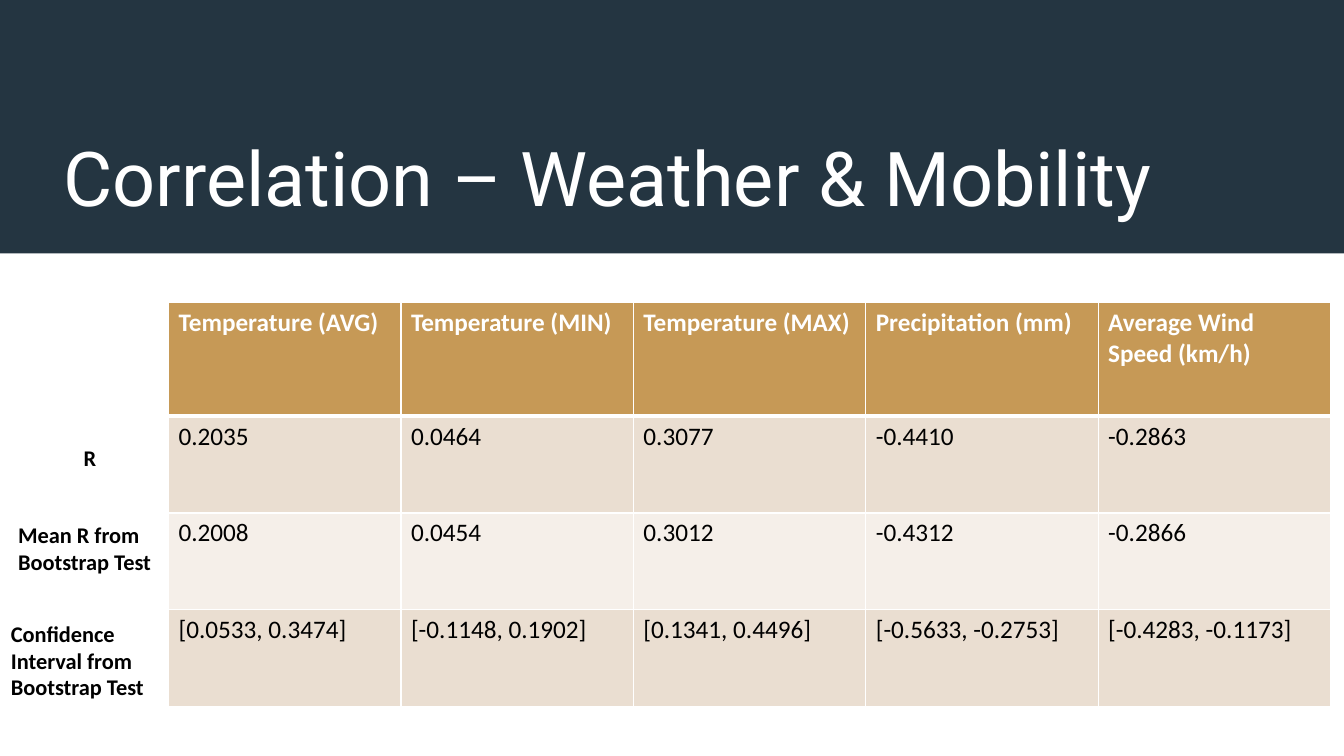
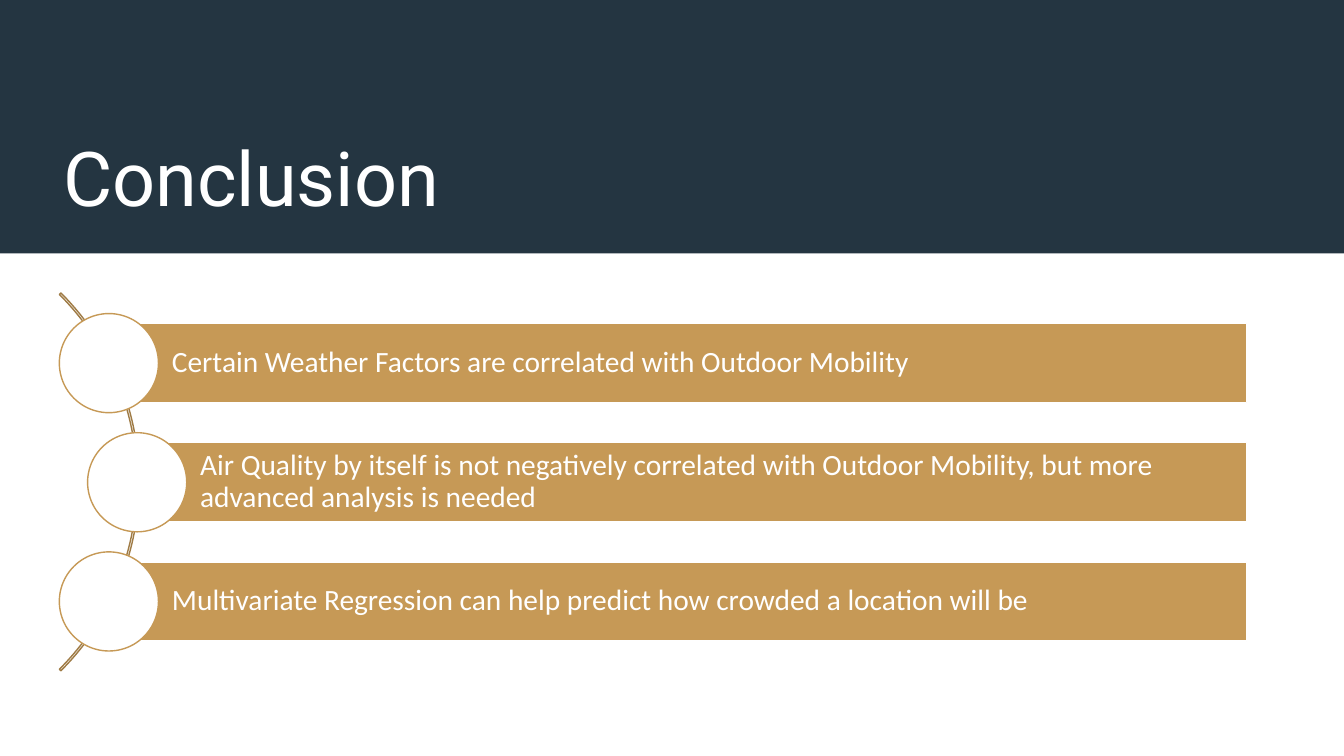
import lxml.etree
import pptx
import pptx.dml.color
import pptx.enum.shapes
import pptx.enum.text
import pptx.oxml.ns
import pptx.util

Pt = pptx.util.Pt
RGBColor = pptx.dml.color.RGBColor
Shape = pptx.enum.shapes.MSO_SHAPE
Anchor = pptx.enum.text.MSO_ANCHOR
Align = pptx.enum.text.PP_ALIGN

NAVY = RGBColor(0x24, 0x35, 0x41)
GOLD = RGBColor(0xC6, 0x99, 0x56)
BRONZE = RGBColor(0x9F, 0x7B, 0x45)
SAND = RGBColor(0xEA, 0xDE, 0xD1)
CREAM = RGBColor(0xF5, 0xEF, 0xE9)
WHITE = RGBColor(0xFF, 0xFF, 0xFF)
BLACK = RGBColor(0x00, 0x00, 0x00)

WIDTH, HEIGHT = 960, 540
INSETS = (7.2, 3.6, 7.2, 3.6)

TABLE = (
    ("Temperature (AVG)", "Temperature (MIN)", "Temperature (MAX)",
     "Precipitation (mm)", "Average Wind Speed (km/h)"),
    ("0.2035", "0.0464", "0.3077", "-0.4410", "-0.2863"),
    ("0.2008", "0.0454", "0.3012", "-0.4312", "-0.2866"),
    ("[0.0533, 0.3474]", "[-0.1148, 0.1902]", "[0.1341, 0.4496]",
     "[-0.5633, -0.2753]", "[-0.4283, -0.1173]"),
)
ROW_LABELS = (
    ("R", 52.6, 314, 112, 27),
    ("Mean R from Bootstrap Test", 5.8, 368.6, 114.5, 65.5),
    ("Confidence Interval from Bootstrap Test", 0.7, 439.2, 125.3, 65.5),
)
CONCLUSIONS = (
    ("Certain Weather Factors are correlated with Outdoor Mobility", 77.8),
    ("Air Quality by itself is not negatively correlated with Outdoor Mobility, "
     "but more advanced analysis is needed", 98),
    ("Multivariate Regression can help predict how crowded a location will be", 77.8),
)


class Builder:
    """Holds the deck style and the slide being drawn."""

    def __init__(self):
        self.deck = pptx.Presentation()
        self.deck.slide_width, self.deck.slide_height = Pt(WIDTH), Pt(HEIGHT)
        self.slide = None

    def start_slide(self, title):
        """Add a slide with its band and title."""
        self.slide = self.deck.slides.add_slide(self.deck.slide_layouts[6])
        self.shape(Shape.RECTANGLE, 0, 0, WIDTH, 181, fill=NAVY)
        self.text_box(title, 38.2, 28.8, 856, 133.2, 54, WHITE, font="Roboto",
                      anchor=Anchor.BOTTOM)

    def shape(self, kind, left, top, width, height, fill=None, line=None):
        """Add a flat preset shape."""
        shape = self.slide.shapes.add_shape(kind, Pt(left), Pt(top), Pt(width), Pt(height))
        shape.shadow.inherit = False
        if fill is None:
            shape.fill.background()
        else:
            shape.fill.solid()
            shape.fill.fore_color.rgb = fill
        if line is None:
            shape.line.fill.background()
        else:
            shape.line.color.rgb = line
            shape.line.width = Pt(1)
        return shape

    def fill_text(self, frame, text, size, color, bold=False, font="Calibri"):
        """Set left-aligned text and format its runs."""
        frame.text = text
        for para in frame.paragraphs:
            para.alignment = Align.LEFT
            for span in para.runs:
                span.font.name = font
                span.font.size = Pt(size)
                span.font.bold = bold
                span.font.color.rgb = color

    def frame_layout(self, frame, anchor, insets=INSETS):
        """Set wrapping, anchor and insets of a text frame."""
        frame.word_wrap = True
        frame.vertical_anchor = anchor
        (frame.margin_left, frame.margin_top,
         frame.margin_right, frame.margin_bottom) = map(Pt, insets)

    def text_box(self, text, left, top, width, height, size, color,
                 bold=False, font="Calibri", anchor=Anchor.TOP):
        """Add a wrapped text box."""
        box = self.slide.shapes.add_textbox(Pt(left), Pt(top), Pt(width), Pt(height))
        self.frame_layout(box.text_frame, anchor)
        self.fill_text(box.text_frame, text, size, color, bold, font)

    def cell_borders(self, cell, widths):
        """Draw white borders on the named sides of a cell."""
        properties = cell._tc.get_or_add_tcPr()
        name = pptx.oxml.ns.qn
        for side, width in widths.items():
            border = lxml.etree.SubElement(properties, name(f"a:ln{side}"), w=str(Pt(width)))
            fill = lxml.etree.SubElement(border, name("a:solidFill"))
            lxml.etree.SubElement(fill, name("a:srgbClr"), val=str(WHITE))

    def table(self, rows, left, top, column_width, row_heights):
        """Add a table with a gold header and banded rows."""
        columns = len(rows[0])
        table = self.slide.shapes.add_table(
            len(rows), columns, Pt(left), Pt(top),
            Pt(column_width * columns), Pt(sum(row_heights))).table
        table.horz_banding = False
        for column in table.columns:
            column.width = Pt(column_width)
        for index, (values, height) in enumerate(zip(rows, row_heights)):
            header = index == 0
            table.rows[index].height = Pt(height)
            widths = {"L": 1, "R": 1, "T": 3 if index == 1 else 1, "B": 3 if header else 1}
            fill = GOLD if header else (CREAM, SAND)[index % 2]
            for cell, value in zip(table.rows[index].cells, values):
                self.cell_borders(cell, widths)
                cell.fill.solid()
                cell.fill.fore_color.rgb = fill
                self.fill_text(cell.text_frame, value, 18, WHITE if header else BLACK, header)

    def arc(self, left, top, size):
        """Add a thin outlined arc over the right quarter of a circle."""
        arc = self.shape(Shape.BLOCK_ARC, left, top, size, size, line=BRONZE)
        for index, value in enumerate((189, 27, 0.004)):
            arc.adjustments[index] = value

    def conclusion(self, text, left, middle):
        """Add a gold bar with a circle centred on its left edge."""
        right, height, diameter = 890.4, 56.6, 70.8
        bar = self.shape(Shape.RECTANGLE, left, middle - height / 2, right - left, height,
                         GOLD, WHITE)
        self.frame_layout(bar.text_frame, Anchor.MIDDLE, (45, 4.2, 4.2, 4.2))
        self.fill_text(bar.text_frame, text, 21, WHITE)
        bar.text_frame.paragraphs[0].line_spacing = 0.9
        self.shape(Shape.OVAL, left - diameter / 2, middle - diameter / 2,
                   diameter, diameter, WHITE, GOLD)


def main():
    """Build both slides and save the deck."""
    builder = Builder()
    builder.start_slide("Correlation – Weather & Mobility")
    builder.table(TABLE, 120.4, 216, 166, (81.4, 69, 69, 69))
    for text, left, top, width, height in ROW_LABELS:
        builder.text_box(text, left, top, width, height, 16, BLACK, bold=True)

    builder.start_slide("Conclusion")
    builder.arc(-282.2, 153.4, 381.6)
    for index, (text, left) in enumerate(CONCLUSIONS):
        builder.conclusion(text, left, 259.4 + 85.1 * index)
    builder.deck.save("out.pptx")


if __name__ == "__main__":
    main()
